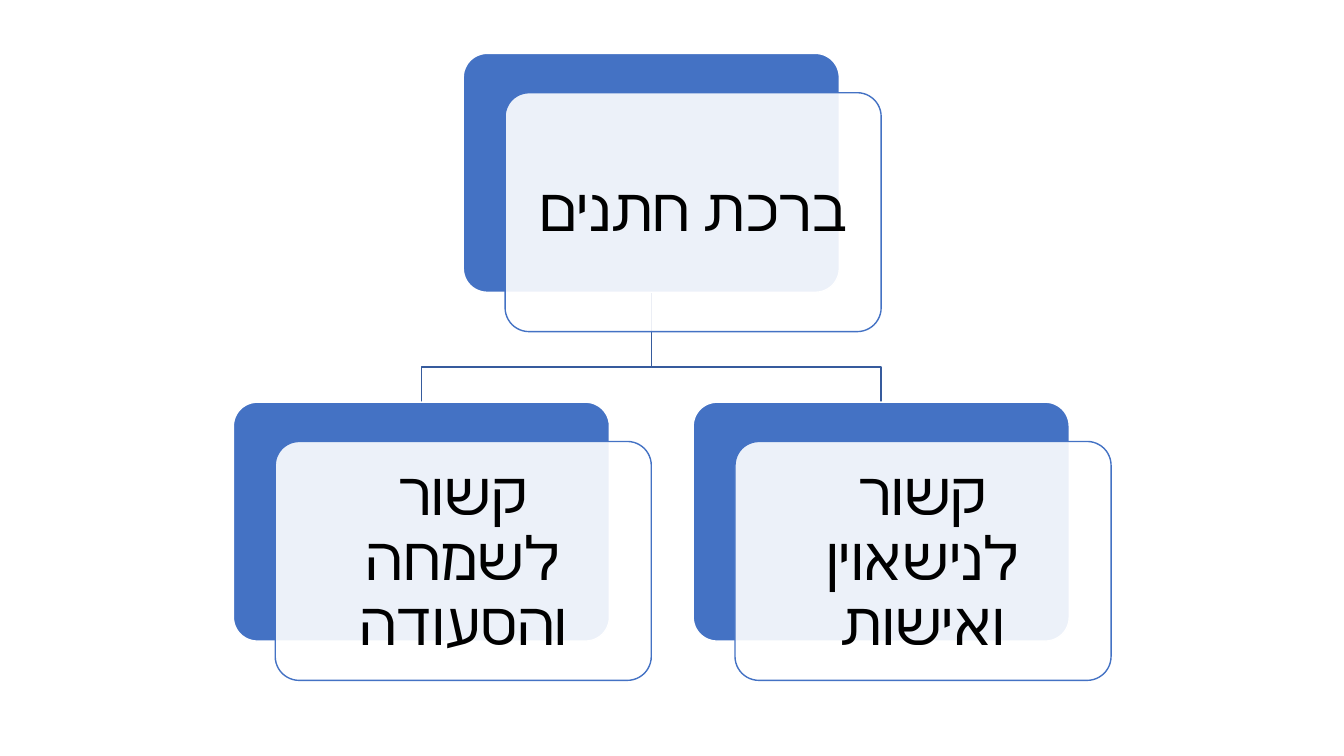
from lxml.etree import SubElement
from pptx import Presentation
from pptx.dml.color import RGBColor
from pptx.enum.shapes import MSO_SHAPE
from pptx.enum.text import MSO_ANCHOR, PP_ALIGN
from pptx.oxml.ns import qn
from pptx.util import Inches, Pt

BLUE, WIRE_BLUE, WHITE, BLACK = "4472C4", "365B9D", "FFFFFF", "000000"
FONT = "Calibri"
CARD_WIDTH, CARD_HEIGHT = 3.73, 2.37
OFFSET_X, OFFSET_Y = 0.415, 0.39  # shift of the front card
CENTER_X, COLUMN_STEP = 6.46, 2.28
ROOT_TOP, CHILD_TOP, JUNCTION_Y = 0.53, 3.99, 3.64


def color(hex_code):
    return RGBColor.from_string(hex_code)


def set_line(shape, hex_code):
    shape.line.color.rgb = color(hex_code)
    shape.line.width = Pt(1)
    shape.shadow.inherit = False


def add_card(slide, left, top, fill, line):
    card = slide.shapes.add_shape(
        MSO_SHAPE.ROUNDED_RECTANGLE,
        Inches(left), Inches(top), Inches(CARD_WIDTH), Inches(CARD_HEIGHT))
    card.adjustments[0] = 0.1
    card.fill.solid()
    card.fill.fore_color.rgb = color(fill)
    set_line(card, line)
    return card


def set_opacity(shape, percent):
    fill_color = shape.fill._xPr.find(qn("a:solidFill"))[0]
    SubElement(fill_color, qn("a:alpha")).set("val", str(percent * 1000))


def write_hebrew(shape, text):
    """Centre right-to-left text in the shape."""
    frame = shape.text_frame
    frame.word_wrap = True
    frame.vertical_anchor = MSO_ANCHOR.MIDDLE
    frame.margin_left = frame.margin_right = Inches(0.18)
    frame.margin_top = frame.margin_bottom = Inches(0.18)
    paragraph = frame.paragraphs[0]
    run = paragraph.add_run()
    run.text = text
    paragraph.alignment = PP_ALIGN.CENTER
    paragraph.line_spacing = 0.9
    paragraph._p.get_or_add_pPr().set("rtl", "1")
    run.font.name = FONT
    run.font.size = Pt(43)
    run.font.color.rgb = color(BLACK)
    SubElement(run._r.get_or_add_rPr(), qn("a:cs")).set("typeface", FONT)


def add_node(slide, center_x, top, text):
    """Add a solid card with a translucent, captioned card in front."""
    left = center_x - CARD_WIDTH / 2
    add_card(slide, left, top, BLUE, WHITE)
    front = add_card(slide, left + OFFSET_X, top + OFFSET_Y, WHITE, BLUE)
    set_opacity(front, 90)
    write_hebrew(front, text)


def add_wire(slide, child_x):
    """Draw an elbow line from the root card to a child card."""
    builder = slide.shapes.build_freeform(
        Inches(CENTER_X), Inches(ROOT_TOP + CARD_HEIGHT))
    corners = [(CENTER_X, JUNCTION_Y), (child_x, JUNCTION_Y), (child_x, CHILD_TOP)]
    builder.add_line_segments(
        [(Inches(x), Inches(y)) for x, y in corners], close=False)
    wire = builder.convert_to_shape()
    wire.fill.background()
    set_line(wire, WIRE_BLUE)


def main():
    presentation = Presentation()
    presentation.slide_width = Inches(13.33)
    presentation.slide_height = Inches(7.5)
    slide = presentation.slides.add_slide(presentation.slide_layouts[6])

    children = [
        (CENTER_X + COLUMN_STEP, "קשור לנישאוין ואישות"),
        (CENTER_X - COLUMN_STEP, "קשור לשמחה והסעודה"),
    ]
    for child_x, _ in children:
        add_wire(slide, child_x)
    add_node(slide, CENTER_X, ROOT_TOP, "ברכת חתנים")
    for child_x, text in children:
        add_node(slide, child_x, CHILD_TOP, text)

    presentation.save("out.pptx")


if __name__ == "__main__":
    main()
